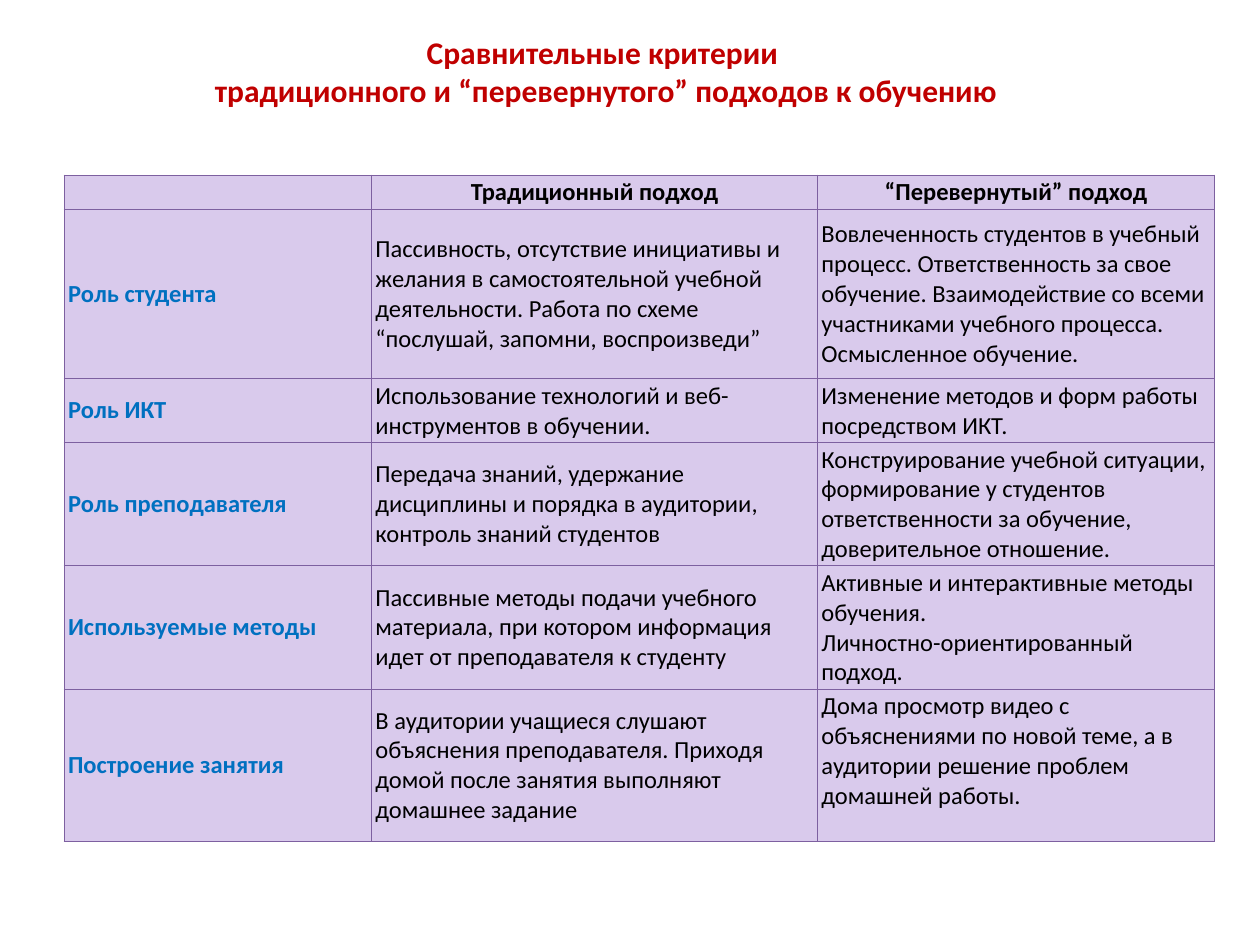
"""Build a slide comparing traditional and flipped teaching."""
from typing import NamedTuple

from lxml.etree import SubElement
from pptx import Presentation
from pptx.dml.color import RGBColor
from pptx.enum.text import MSO_ANCHOR, MSO_AUTO_SIZE, PP_ALIGN
from pptx.oxml.ns import qn
from pptx.util import Inches, Pt

RED, BLUE, BLACK = "C00000", "0070C0", "000000"
FILL, EDGE = "D9CAEC", "7D60A0"
WIDTHS = (2.44, 3.54, 3.15)


class Row(NamedTuple):
    high: float
    label: str
    old: str
    new: str


HEAD = Row(0.27, "", "Традиционный подход", "“Перевернутый” подход")
ROWS = (
    Row(1.34, "Роль студента",
        "Пассивность, отсутствие инициативы и желания в самостоятельной учебной "
        "деятельности. Работа по схеме “послушай, запомни, воспроизведи”",
        "Вовлеченность студентов в учебный процесс. Ответственность за свое "
        "обучение. Взаимодействие со всеми участниками учебного процесса. "
        "Осмысленное обучение."),
    Row(0.5, "Роль ИКТ",
        "Использование технологий и веб- инструментов в обучении.",
        "Изменение методов и форм работы посредством ИКТ."),
    Row(0.98, "Роль преподавателя",
        "Передача знаний, удержание дисциплины и порядка в аудитории, "
        "контроль знаний студентов",
        "Конструирование учебной ситуации, формирование у студентов "
        "ответственности за обучение, доверительное отношение."),
    Row(0.98, "Используемые методы",
        "Пассивные методы подачи учебного материала, при котором информация "
        "идет от преподавателя к студенту",
        "Активные и интерактивные методы обучения.\n"
        "Личностно-ориентированный подход."),
    Row(1.21, "Построение занятия",
        "В аудитории учащиеся слушают объяснения преподавателя. Приходя домой "
        "после занятия выполняют домашнее задание",
        "Дома просмотр видео с объяснениями по новой теме, а в аудитории "
        "решение проблем домашней работы."),
)


def tint(code: str) -> RGBColor:
    return RGBColor.from_string(code)


def write(para, text: str, *, size: int = 14, color: str = BLACK,
          bold: bool = False, align=PP_ALIGN.LEFT) -> None:
    para.text = text
    para.alignment = align
    for run in para.runs:
        font = run.font
        font.name, font.size, font.bold = "Calibri", Pt(size), bold
        font.color.rgb = tint(color)
    if not text:
        SubElement(para._p, qn("a:endParaRPr"), sz=str(size * 100))


def frame(cell) -> None:
    props = cell._tc.get_or_add_tcPr()
    for side in ("lnL", "lnR", "lnT", "lnB"):
        line = SubElement(props, qn(f"a:{side}"), w=str(Pt(0.75)))
        SubElement(SubElement(line, qn("a:solidFill")), qn("a:srgbClr"), val=EDGE)


def style(cell) -> None:
    frame(cell)
    cell.fill.solid()
    cell.fill.fore_color.rgb = tint(FILL)
    cell.margin_left = cell.margin_right = Inches(0.03)
    cell.margin_top = cell.margin_bottom = Inches(0.02)
    cell.vertical_anchor = MSO_ANCHOR.MIDDLE


def draw_title(shape) -> None:
    shape.left, shape.top = Inches(0.28), Inches(0.21)
    shape.width, shape.height = Inches(9.06), Inches(0.71)
    box = shape.text_frame
    box.auto_size = MSO_AUTO_SIZE.SHAPE_TO_FIT_TEXT
    box.vertical_anchor = MSO_ANCHOR.TOP
    look = dict(size=18, color=RED, bold=True, align=PP_ALIGN.CENTER)
    write(box.paragraphs[0], "Сравнительные критерии ", **look)
    write(box.add_paragraph(),
          "традиционного и “перевернутого” подходов к обучению", **look)


def draw_table(slide) -> None:
    rows = (HEAD, *ROWS)
    high = sum(row.high for row in rows)
    table = slide.shapes.add_table(
        len(rows), len(WIDTHS), Inches(0.51), Inches(1.39),
        Inches(sum(WIDTHS)), Inches(high)).table
    table.first_row = table.horz_banding = False
    for col, wide in zip(table.columns, WIDTHS):
        col.width = Inches(wide)
    for r, row in enumerate(rows):
        table.rows[r].height = Inches(row.high)
        for c, text in enumerate((row.label, row.old, row.new)):
            cell = table.cell(r, c)
            style(cell)
            write(cell.text_frame.paragraphs[0], text,
                  color=BLUE if c == 0 else BLACK,
                  bold=r == 0 or c == 0,
                  align=PP_ALIGN.CENTER if r == 0 else PP_ALIGN.LEFT)
    table.cell(len(rows) - 1, 2).vertical_anchor = MSO_ANCHOR.TOP


def main() -> None:
    deck = Presentation()
    deck.slide_width, deck.slide_height = Inches(10), Inches(7.5)
    slide = deck.slides.add_slide(deck.slide_layouts.get_by_name("Title Only"))
    draw_table(slide)
    draw_title(slide.shapes.title)
    deck.save("out.pptx")


if __name__ == "__main__":
    main()
